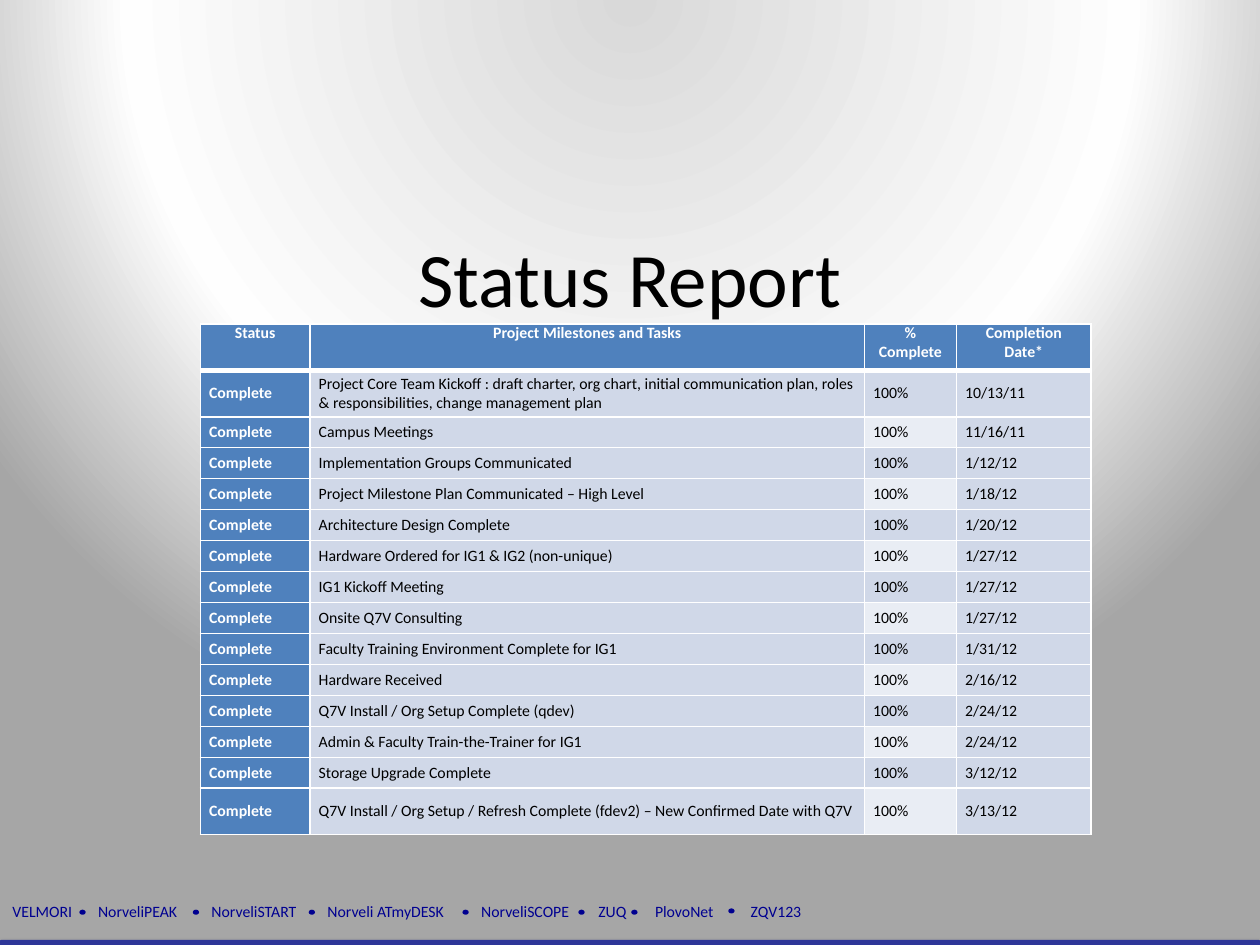
"""Status report slide: a milestone table over a radial grey background."""
from dataclasses import dataclass
from typing import Any

import pptx
import pptx.dml.color
import pptx.enum.shapes
import pptx.enum.text
import pptx.oxml
import pptx.oxml.ns
import pptx.util

ALIGN = pptx.enum.text.PP_ALIGN
ANCHOR = pptx.enum.text.MSO_ANCHOR
SHAPE = pptx.enum.shapes.MSO_SHAPE
NS_A = 'xmlns:a="http://schemas.openxmlformats.org/drawingml/2006/main"'

SLIDE_WIDTH = pptx.util.Inches(10)
SLIDE_HEIGHT = pptx.util.Inches(7.5)
GRID_COLUMNS, GRID_ROWS = 100, 75


@dataclass(frozen=True)
class Theme:
    font: str = "Calibri"
    title_size: int = 44
    body_size: int = 9
    ink: str = "000000"
    white: str = "FFFFFF"
    accent: str = "4F81BD"
    cell: str = "D0D8E8"
    cell_light: str = "E9EDF4"
    footer: str = "000090"
    bar: str = "2E3698"
    # position %, colour, opacity %
    backdrop: tuple = ((0, "D9D9D9", 80), (64, "FEFEFE", 100), (100, "A6A6A6", 100))


THEME = Theme()


@dataclass(frozen=True)
class Box:
    """A place on the slide, in grid columns and rows."""
    left: float
    top: float
    width: float
    height: float

    def emu(self) -> tuple[int, int, int, int]:
        return col(self.left), row(self.top), col(self.width), row(self.height)


@dataclass(frozen=True)
class Milestone:
    task: str
    date: str
    lines: float = 1


@dataclass(frozen=True)
class Service:
    """A footer name, where it starts and where the dot before it stands."""
    name: str
    start: float
    dot: float | None = None
    dot_top: float = 72.2


HEADINGS = ("Status", "Project Milestones and Tasks", "% Complete", "Completion Date*")
COLUMN_WIDTHS = (8.7, 44, 7.3, 10.7)
TABLE = Box(15.9, 25.7, sum(COLUMN_WIDTHS), 40.6)
TALL = 1.5

MILESTONES = (
    Milestone("Project Core Team Kickoff : draft charter, org chart, initial communication plan, "
              "roles & responsibilities, change management plan", "10/13/11", TALL),
    Milestone("Campus Meetings", "11/16/11"),
    Milestone("Implementation Groups Communicated", "1/12/12"),
    Milestone("Project Milestone Plan Communicated – High Level", "1/18/12"),
    Milestone("Architecture Design Complete", "1/20/12"),
    Milestone("Hardware Ordered for IG1 & IG2 (non-unique)", "1/27/12"),
    Milestone("IG1 Kickoff Meeting", "1/27/12"),
    Milestone("Onsite Q7V Consulting", "1/27/12"),
    Milestone("Faculty Training Environment Complete for IG1", "1/31/12"),
    Milestone("Hardware Received", "2/16/12"),
    Milestone("Q7V Install / Org Setup Complete (qdev)", "2/24/12"),
    Milestone("Admin & Faculty Train-the-Trainer for IG1", "2/24/12"),
    Milestone("Storage Upgrade Complete", "3/12/12"),
    Milestone("Q7V Install / Org Setup / Refresh Complete (fdev2) – New Confirmed Date with Q7V",
              "3/13/12", TALL),
)

SERVICES = (
    Service("VELMORI", 1),
    Service("NorveliPEAK", 7.8, 6.3),
    Service("NorveliSTART", 16.8, 15.3),
    Service("Norveli ATmyDESK", 26, 24.5),
    Service("NorveliSCOPE", 38.2, 36.7),
    Service("ZUQ", 47.5, 45.9),
    Service("PlovoNet", 52, 50.1),
    Service("ZQV123", 59.6, 57.8, 72.1),
)


def col(count: float) -> int:
    return round(SLIDE_WIDTH * count / GRID_COLUMNS)


def row(count: float) -> int:
    return round(SLIDE_HEIGHT * count / GRID_ROWS)


def rgb(colour: str) -> pptx.dml.color.RGBColor:
    return pptx.dml.color.RGBColor.from_string(colour)


def apply(target: Any, values: dict[str, Any]) -> None:
    for name, value in values.items():
        setattr(target, name, value)


def write(paragraph, text: str, size: int, colour: str, bold: bool = False,
          align=ALIGN.LEFT) -> None:
    paragraph.alignment = align
    run = paragraph.add_run()
    run.text = text
    apply(run.font, {"name": THEME.font, "size": pptx.util.Pt(size), "bold": bold})
    run.font.color.rgb = rgb(colour)


def paint_background(slide) -> None:
    slide.background.fill.solid()
    properties = slide.element.find(".//" + pptx.oxml.ns.qn("p:bgPr"))
    stops = "".join(
        f'<a:gs pos="{place * 1000}"><a:srgbClr val="{colour}">'
        f'<a:alpha val="{opacity * 1000}"/></a:srgbClr></a:gs>'
        for place, colour, opacity in THEME.backdrop)
    properties.replace(properties[0], pptx.oxml.parse_xml(
        f'<a:gradFill {NS_A} rotWithShape="1"><a:gsLst>{stops}</a:gsLst><a:path path="circle">'
        '<a:fillToRect l="50000" t="-80000" r="50000" b="180000"/></a:path></a:gradFill>'))


def add_solid(slide, kind, box: Box, colour: str):
    solid = slide.shapes.add_shape(kind, *box.emu())
    solid.shadow.inherit = False
    solid.fill.solid()
    solid.fill.fore_color.rgb = rgb(colour)
    solid.line.fill.background()
    return solid


def add_bar(slide) -> None:
    bar = add_solid(slide, SHAPE.ROUNDED_RECTANGLE, Box(0, 74.6, 100, 0.5), THEME.bar)
    effects = bar.element.spPr.find(pptx.oxml.ns.qn("a:effectLst"))
    effects.append(pptx.oxml.parse_xml(
        f'<a:outerShdw {NS_A} blurRad="40000" dist="23000" dir="5400000" rotWithShape="0">'
        f'<a:srgbClr val="{THEME.ink}"><a:alpha val="35000"/></a:srgbClr></a:outerShdw>'))


def add_footer(slide) -> None:
    frame = slide.shapes.add_textbox(*Box(0, 71.1, 78.1, 2.5).emu()).text_frame
    apply(frame, {"word_wrap": True, "auto_size": pptx.enum.text.MSO_AUTO_SIZE.SHAPE_TO_FIT_TEXT})
    names = frame.paragraphs[0]
    stops = "".join(f'<a:tab pos="{col(service.start - SERVICES[0].start)}" algn="l"/>'
                    for service in SERVICES[1:])
    names._p.get_or_add_pPr().append(pptx.oxml.parse_xml(f"<a:tabLst {NS_A}>{stops}</a:tabLst>"))
    write(names, "\t".join(service.name for service in SERVICES), THEME.body_size, THEME.footer)
    for service in SERVICES:
        if service.dot is not None:
            add_solid(slide, SHAPE.OVAL, Box(service.dot, service.dot_top, 0.5, 0.4), THEME.footer)


def set_borders(cell, top: int = 1, bottom: int = 1) -> None:
    """Draw white cell edges; widths are in points."""
    edges = {"lnL": 1, "lnR": 1, "lnT": top, "lnB": bottom}
    for place, (edge, width) in enumerate(edges.items()):
        cell._tc.get_or_add_tcPr().insert(place, pptx.oxml.parse_xml(
            f'<a:{edge} {NS_A} w="{pptx.util.Pt(width)}"><a:solidFill>'
            f'<a:srgbClr val="{THEME.white}"/></a:solidFill></a:{edge}>'))


def fill_cell(cell, text: str, row_index: int, column_index: int) -> None:
    is_heading = row_index == 0
    is_accent = is_heading or column_index == 0
    is_light = column_index == 2 and row_index % 2 == 0
    apply(cell, {"margin_left": col(0.7), "margin_right": col(0.7),
                 "margin_top": 0, "margin_bottom": 0,
                 "vertical_anchor": ANCHOR.TOP if is_heading else ANCHOR.MIDDLE})
    cell.fill.solid()
    cell.fill.fore_color.rgb = rgb(
        THEME.accent if is_accent else THEME.cell_light if is_light else THEME.cell)
    set_borders(cell, top=3 if row_index == 1 else 1, bottom=3 if is_heading else 1)
    write(cell.text_frame.paragraphs[0], text, THEME.body_size,
          THEME.white if is_accent else THEME.ink, is_accent,
          ALIGN.CENTER if is_heading else ALIGN.LEFT)


def add_milestones(slide) -> None:
    records = [HEADINGS] + [("Complete", item.task, "100%", item.date) for item in MILESTONES]
    heights = [TALL] + [item.lines for item in MILESTONES]
    table = slide.shapes.add_table(len(records), len(HEADINGS), *TABLE.emu()).table
    apply(table, {"first_col": True, "horz_banding": False})
    for column, width in zip(table.columns, COLUMN_WIDTHS):
        column.width = col(width)
    for row_index, (record, lines) in enumerate(zip(records, heights)):
        table.rows[row_index].height = row(TABLE.height * lines / sum(heights))
        for column_index, text in enumerate(record):
            fill_cell(table.cell(row_index, column_index), text, row_index, column_index)


def add_title(slide) -> None:
    frame = slide.shapes.add_textbox(*Box(7.5, 17.8, 85, 16.1).emu()).text_frame
    apply(frame, {"word_wrap": True, "vertical_anchor": ANCHOR.TOP})
    write(frame.paragraphs[0], "Status Report", THEME.title_size, THEME.ink, align=ALIGN.CENTER)


def main() -> None:
    deck = pptx.Presentation()
    apply(deck, {"slide_width": SLIDE_WIDTH, "slide_height": SLIDE_HEIGHT})
    slide = deck.slides.add_slide(deck.slide_layouts[6])
    for draw in (paint_background, add_bar, add_footer, add_milestones, add_title):
        draw(slide)
    deck.save("out.pptx")


if __name__ == "__main__":
    main()
